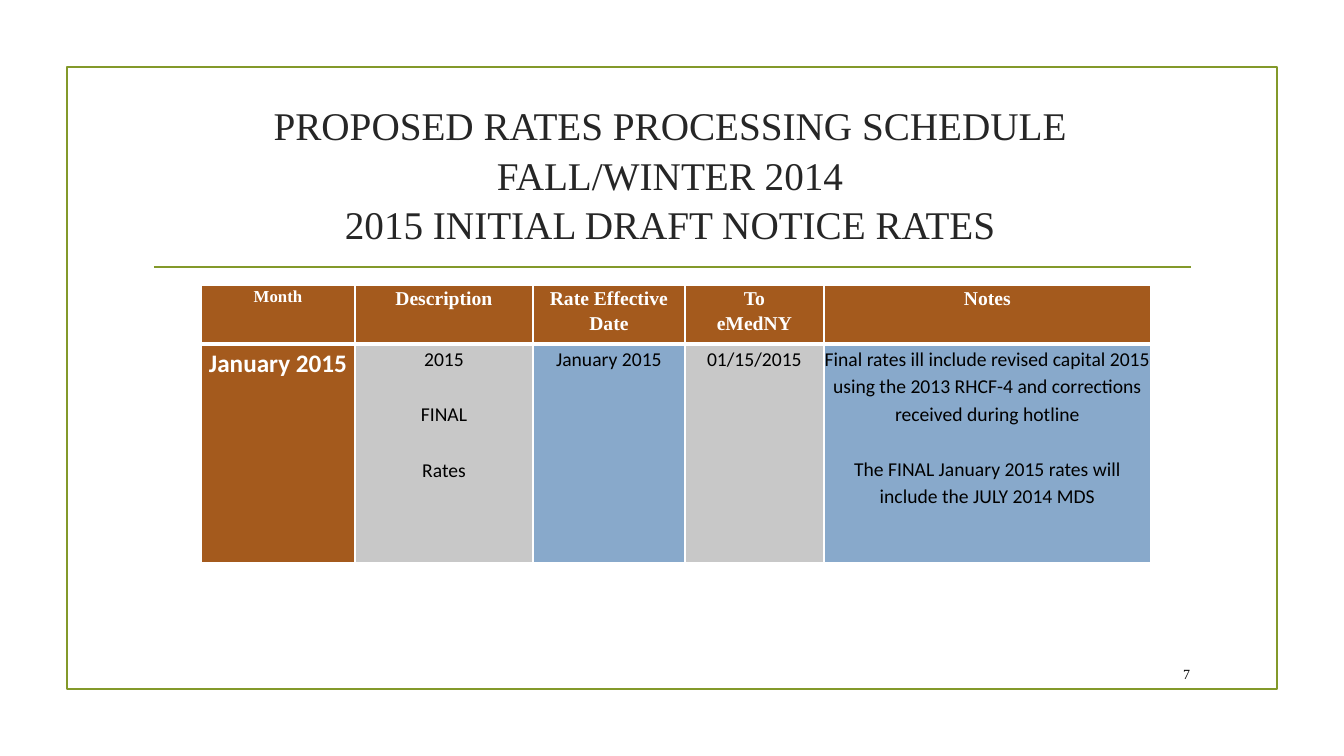
from lxml.etree import SubElement
from pptx import Presentation
from pptx.dml.color import RGBColor
from pptx.enum.shapes import MSO_CONNECTOR, MSO_SHAPE
from pptx.enum.text import MSO_ANCHOR, PP_ALIGN
from pptx.oxml import parse_xml
from pptx.oxml.ns import nsdecls, qn
from pptx.util import Pt

# Content
TITLE = ("PROPOSED RATES PROCESSING SCHEDULE FALL/WINTER 2014\v"
         "2015 INITIAL DRAFT NOTICE RATES")
PAGE_NUMBER = "7"
HEADINGS = [["Month"], ["Description"], ["Rate Effective Date"],
            ["To", "eMedNY"], ["Notes"]]
JANUARY = [
    ["January 2015"],
    ["2015", "FINAL", "Rates"],
    ["January 2015"],
    ["01/15/2015"],
    ["Final rates ill include revised capital 2015 using the 2013 RHCF-4 "
     "and corrections received during hotline",
     "The FINAL January 2015 rates will include the JULY 2014 MDS"],
]

# Layout in px
SLIDE = (1344, 756)
FRAME = (67, 67, 1210, 622)
RULE = (154, 267, 1191, 267)
TITLE_BOX = (141, 89, 1058, 169)
TABLE_CORNER = (201, 285)
COLUMNS = [154, 178, 152, 139, 327]
ROWS = [59, 219]
NUMBER_BOX = (1141, 658, 59, 31)

GREEN, BROWN, GREY, BLUE = "83992A", "A45A1D", "C8C8C8", "88A9CB"
WHITE, BLACK, CHARCOAL = "FFFFFF", "000000", "262626"
SERIF, SANS = "Times New Roman", "Calibri"


def px(*lengths):
    return [round(length * 914400 / 100.8) for length in lengths]


def rgb(value):
    return RGBColor.from_string(value)


def style(paragraph, face, size, color, align, bold=False):
    paragraph.alignment = align
    font = paragraph.font
    font.name, font.size, font.bold = face, Pt(size), bold
    font.color.rgb = rgb(color)


def add_borders(cell, bottom):
    properties = cell._tc.get_or_add_tcPr()
    for i, side in enumerate("LRTB"):
        width = Pt(bottom if side == "B" else 1)
        properties.insert(i, parse_xml(
            f'<a:ln{side} {nsdecls("a")} w="{width}"><a:solidFill>'
            f'<a:srgbClr val="{WHITE}"/></a:solidFill></a:ln{side}>'))


def fill_cell(cell, lines, fill, face, size, color, bold, gap, bottom):
    cell.margin_left = cell.margin_right = 0
    cell.margin_top = cell.margin_bottom = 0
    cell.fill.solid()
    cell.fill.fore_color.rgb = rgb(fill)
    add_borders(cell, bottom)
    cell.text_frame.text = "\n".join(lines)
    for i, paragraph in enumerate(cell.text_frame.paragraphs):
        style(paragraph, face, size, color, PP_ALIGN.CENTER, bold)
        paragraph.line_spacing = 1.15
        if i and gap:
            paragraph.space_before = Pt(gap)


prs = Presentation()
prs.slide_width, prs.slide_height = px(*SLIDE)
slide = prs.slides.add_slide(prs.slide_layouts[5])
shapes = slide.shapes

# Frame and rule
frame = shapes.add_shape(MSO_SHAPE.RECTANGLE, *px(*FRAME))
frame.shadow.inherit = False
frame.fill.background()
rule = shapes.add_connector(MSO_CONNECTOR.STRAIGHT, *px(*RULE))
SubElement(rule._element.spPr, qn("a:effectLst"))
for outlined in (frame, rule):
    outlined.line.color.rgb = rgb(GREEN)
    outlined.line.width = Pt(1.25)

# Title
title = shapes.title
title.left, title.top, title.width, title.height = px(*TITLE_BOX)
title.text_frame.text = TITLE
title.text_frame.vertical_anchor = MSO_ANCHOR.MIDDLE
heading = title.text_frame.paragraphs[0]
style(heading, SERIF, 28, CHARCOAL, PP_ALIGN.CENTER)
heading.line_spacing = 1.05

# Schedule table
schedule = shapes.add_table(
    len(ROWS), len(COLUMNS), *px(*TABLE_CORNER, sum(COLUMNS), sum(ROWS))).table
schedule.horz_banding = False
for row, height in zip(schedule.rows, px(*ROWS)):
    row.height = height
for column, width in zip(schedule.columns, px(*COLUMNS)):
    column.width = width
for c, (label, entry) in enumerate(zip(HEADINGS, JANUARY)):
    first = c == 0
    fill_cell(schedule.cell(0, c), label, BROWN, SERIF, 12 if first else 14,
              WHITE, bold=True, gap=0, bottom=3)
    fill_cell(schedule.cell(1, c), entry,
              BROWN if first else (BLUE, GREY)[c % 2],
              SANS, 18 if first else 14, WHITE if first else BLACK,
              bold=first, gap=20, bottom=1)

# Page number
number = shapes.add_textbox(*px(*NUMBER_BOX)).text_frame
number.word_wrap = True
number.vertical_anchor = MSO_ANCHOR.MIDDLE
number.text = PAGE_NUMBER
style(number.paragraphs[0], SERIF, 10, BLACK, PP_ALIGN.RIGHT)

prs.save("out.pptx")
